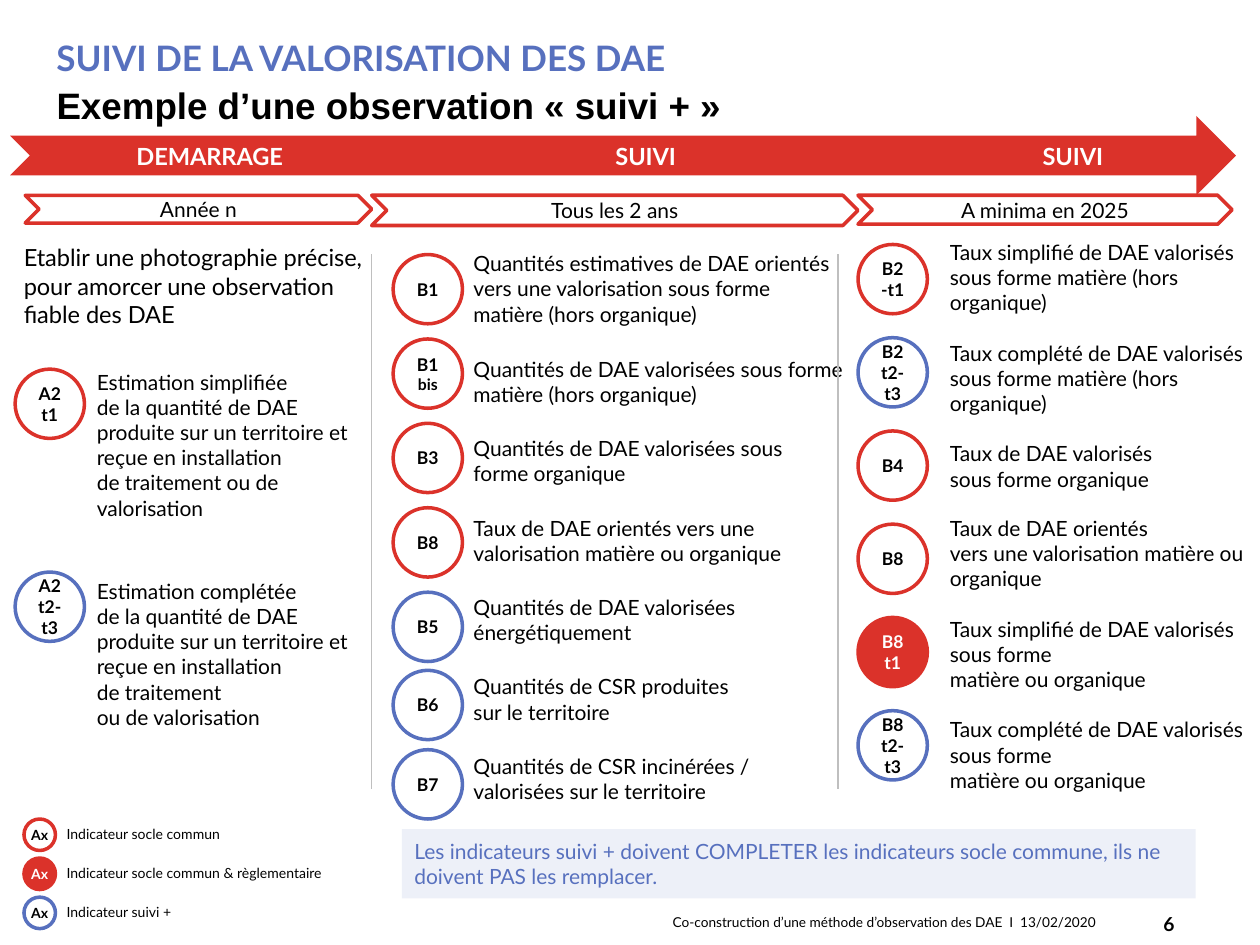
from copy import deepcopy

from lxml import etree
from pptx import Presentation
from pptx import util as u
from pptx.dml.color import RGBColor
from pptx.enum import shapes, text
from pptx.oxml.ns import qn

RED = RGBColor(0xDB, 0x32, 0x2A)
BLUE = RGBColor(0x57, 0x70, 0xBE)
GREY = RGBColor(0xBF, 0xBF, 0xBF)
WHITE = RGBColor(0xFF, 0xFF, 0xFF)
BLACK = RGBColor(0, 0, 0)

# Indicator kinds: outline, fill, label colour
COMMON = (RED, None, BLACK)
REGULATORY = (RED, RED, WHITE)
PLUS = (BLUE, None, BLACK)

TITLE = "SUIVI DE LA VALORISATION DES DAE"
SUBTITLE = "Exemple d’une observation « suivi + »"
INTRO = "Etablir une photographie précise, pour amorcer une observation fiable des DAE"
NOTE = ("Les indicateurs suivi + doivent COMPLETER les indicateurs socle commune, "
        "ils ne doivent PAS les remplacer.")
FOOTER = "Co-construction d’une méthode d’observation des DAE  I  13/02/2020"
PAGE = "6"

# Phase, (left, width) of its heading, period, (left, width, height) of its chevron
PHASES = [
    ("DEMARRAGE", (0.2, 2.93), "Année n", (0.2, 2.75, 0.22)),
    ("SUIVI", (3.66, 2.93), "Tous les 2 ans", (2.95, 3.86, 0.24)),
    ("SUIVI", (7.35, 2.33), "A minima en 2025", (6.81, 2.97, 0.23)),
]

# Items: label, kind, description, height of the description
TALL, MEDIUM, SHORT = 1.31, 0.71, 0.5
COLUMNS = [
    dict(circle_left=0.12, circle_tops=[2.93, 4.54],
         text_left=0.67, text_top=2.88, text_width=2.36, gap=0.35, items=[
        ("A2t1", COMMON, "Estimation simplifiée\nde la quantité de DAE produite sur un territoire "
         "et reçue en installation\nde traitement ou de valorisation", TALL),
        ("A2 t2-t3", PLUS, "Estimation complétée\nde la quantité de DAE produite sur un territoire "
         "et reçue en installation\nde traitement\nou de valorisation", TALL),
    ]),
    dict(circle_left=3.12,
         circle_tops=[2.02 + 0.67 * row for row in range(5)] + [5.32, 5.95],
         text_left=3.66, text_top=1.94, text_width=3.1, gap=0.13, items=[
        ("B1", COMMON, "Quantités estimatives de DAE orientés vers une valorisation "
         "sous forme matière (hors organique)", MEDIUM),
        ("B1 bis", COMMON, "Quantités de DAE valorisées sous forme\nmatière (hors organique)", SHORT),
        ("B3", COMMON, "Quantités de DAE valorisées sous\nforme organique", SHORT),
        ("B8", COMMON, "Taux de DAE orientés vers une\nvalorisation matière ou organique", SHORT),
        ("B5", PLUS, "Quantités de DAE valorisées\nénergétiquement", SHORT),
        ("B6", PLUS, "Quantités de CSR produites\nsur le territoire", SHORT),
        ("B7", PLUS, "Quantités de CSR incinérées /\nvalorisées sur le territoire", SHORT),
    ]),
    dict(circle_left=6.81, circle_tops=[1.94 + 0.74 * row for row in range(6)],
         text_left=7.44, text_top=1.85, text_width=2.56, gap=0.09, items=[
        ("B2-t1", COMMON, "Taux simplifié de DAE valorisés sous forme matière (hors organique)", MEDIUM),
        ("B2 t2-t3", PLUS, "Taux complété de DAE valorisés sous forme matière (hors organique)", MEDIUM),
        ("B4", COMMON, "Taux de DAE valorisés\nsous forme organique", SHORT),
        ("B8", COMMON, "Taux de DAE orientés\nvers une valorisation matière ou organique", MEDIUM),
        ("B8 t1", REGULATORY, "Taux simplifié de DAE valorisés sous forme\nmatière ou organique", MEDIUM),
        ("B8 t2-t3", PLUS, "Taux complété de DAE valorisés sous forme\nmatière ou organique", MEDIUM),
    ]),
]
LEGEND = [("Indicateur socle commun", COMMON),
          ("Indicateur socle commun & règlementaire", REGULATORY),
          ("Indicateur suivi +", PLUS)]
SEPARATORS = [2.95, 6.65]


def write(shape, words, size, color=BLACK, bold=False, align="LEFT", font="Lato",
          anchor="MIDDLE", inset=None, tail=""):
    """Put words in a shape; tail is a last run, one point smaller."""
    frame = shape.text_frame
    frame.word_wrap = True
    frame.vertical_anchor = text.MSO_ANCHOR[anchor]
    if inset is not None:
        for side in ("left", "top", "right", "bottom"):
            setattr(frame, f"margin_{side}", u.Inches(inset))
    line = frame.paragraphs[0]
    line.text = words
    line.alignment = text.PP_ALIGN[align]
    if tail:
        line.add_run().text = tail
    for run in line.runs:
        formats = dict(name=font, size=u.Pt(size), bold=bold)
        for key, value in formats.items():
            setattr(run.font, key, value)
        run.font.color.rgb = color
    for line_break in line._p.findall(qn("a:br")):
        line_break.insert(0, deepcopy(line.runs[0]._r.rPr))
    if tail:
        line.runs[-1].font.size = u.Pt(size - 1)
    return line


def add_text(slide, box, words, size, **formats):
    label = slide.shapes.add_textbox(*map(u.Inches, box))
    return write(label, words, size, **formats)


def add_preset(slide, kind, box, fill=None, outline=None):
    shape = slide.shapes.add_shape(shapes.MSO_SHAPE[kind], *map(u.Inches, box))
    shape.shadow.inherit = False
    if fill is None:
        shape.fill.background()
    else:
        shape.fill.solid()
        shape.fill.fore_color.rgb = fill
    if outline is None:
        shape.line.fill.background()
    else:
        shape.line.color.rgb = outline
        shape.line.width = u.Pt(2)
    return shape


def add_indicator(slide, left, top, diameter, kind, label, size, **formats):
    outline, fill, color = kind
    circle = add_preset(slide, "OVAL", (left, top, diameter, diameter), fill, outline)
    write(circle, label, size, color=color, bold=True, align="CENTER", **formats)


def add_header(slide):
    add_text(slide, (0.35, 0, 7.8, 0.92), TITLE, 20, color=BLUE, bold=True)
    add_text(slide, (0.35, 0.68, 7.79, 0.31), SUBTITLE, 21, bold=True, font="Arial")
    add_preset(slide, "NOTCHED_RIGHT_ARROW", (0.08, 0.92, 9.73, 0.63), RED)
    for phase, (left, width), period, (start, length, height) in PHASES:
        add_text(slide, (left, 1.08, width, 0.33), phase, 13.5, color=WHITE,
                 bold=True, align="CENTER", anchor="TOP")
        chevron = add_preset(slide, "CHEVRON", (start, 1.55, length, height), WHITE, RED)
        write(chevron, period, 12, align="CENTER")


def add_columns(slide):
    add_text(slide, (0.09, 1.88, 2.91, 0.78), INTRO, 13.5, anchor="TOP")
    for column in COLUMNS:
        top = column["text_top"]
        for (label, kind, words, height), circle_top in zip(column["items"], column["circle_tops"]):
            box = (column["text_left"], top, column["text_width"], height)
            if label == "B1 bis":
                box = (column["text_left"], top, 3.3, height)
            add_text(slide, box, words, 12, anchor="TOP")
            main, tail = ("B1 ", "bis") if label == "B1 bis" else (label, "")
            add_indicator(slide, column["circle_left"], circle_top, 0.55, kind, main, 10, tail=tail)
            top += height + column["gap"]
    for x in SEPARATORS:
        separator = slide.shapes.add_connector(
            shapes.MSO_CONNECTOR.STRAIGHT, *map(u.Inches, (x, 2.02, x, 6.26)))
        separator.line.color.rgb = GREY
        separator.line.width = u.Pt(0.75)
        etree.SubElement(separator._element.spPr, qn("a:effectLst"))


def add_bottom(slide):
    for row, (meaning, kind) in enumerate(LEGEND):
        top = 6.5 + 0.31 * row
        add_text(slide, (0.43, top, 2.6, 0.24), meaning, 8, anchor="TOP")
        add_indicator(slide, 0.19, top, 0.25, kind, "Ax", 8, inset=0)
    note = add_preset(slide, "RECTANGLE", (3.19, 6.58, 6.3, 0.55), BLUE)
    tint = note._element.spPr.find(qn("a:solidFill"))[0]
    etree.SubElement(tint, qn("a:alpha"), val="10000")
    write(note, NOTE, 12, color=BLUE)
    add_text(slide, (5.24, 7.18, 4.32, 0.3), FOOTER, 7.8).line_spacing = 0.8
    add_text(slide, (8.86, 7.13, 0.56, 0.4), PAGE, 11, bold=True, align="RIGHT")


def main():
    deck = Presentation()
    deck.slide_width, deck.slide_height = u.Inches(10), u.Inches(7.5)
    slide = deck.slides.add_slide(deck.slide_layouts[6])
    add_header(slide)
    add_columns(slide)
    add_bottom(slide)
    deck.save("out.pptx")


if __name__ == "__main__":
    main()
